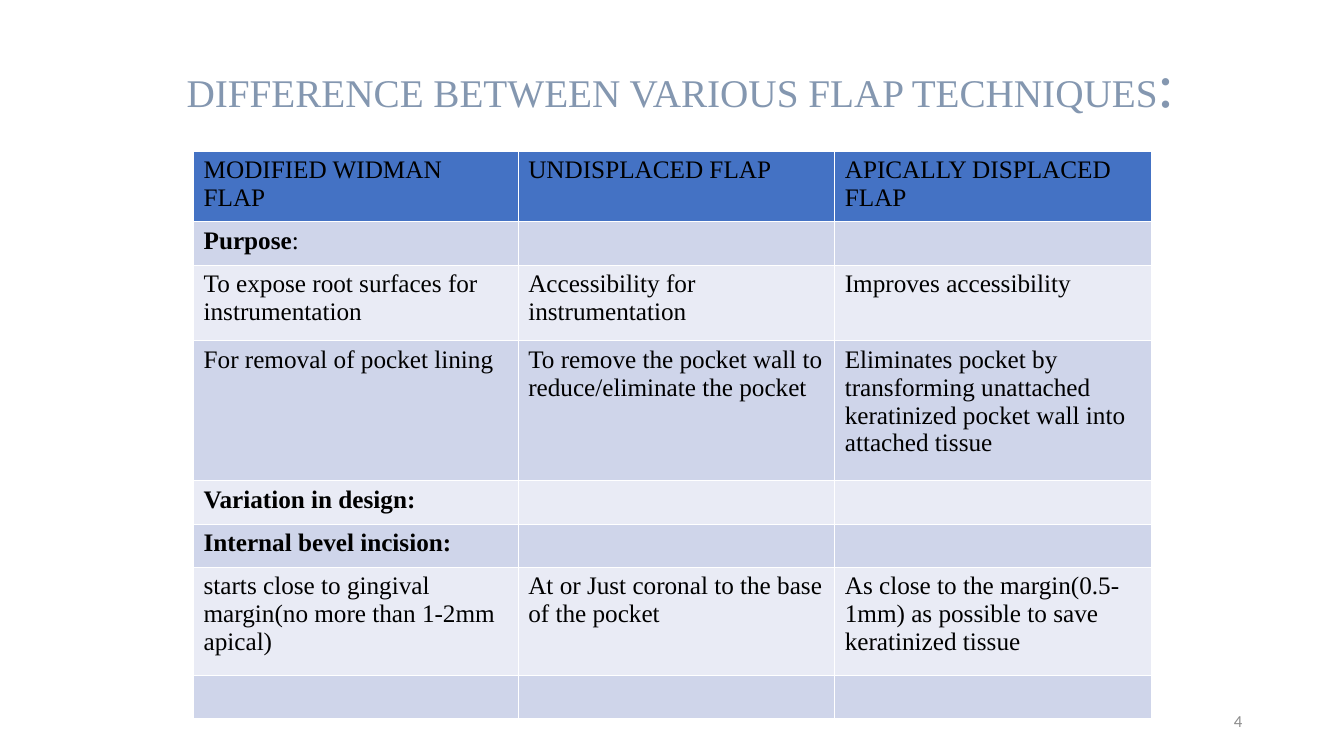
import pptx
import pptx.dml.color
import pptx.enum.text
import pptx.oxml
import pptx.oxml.ns
import pptx.util
from pptx.util import Inches

ALIGN = pptx.enum.text.PP_ALIGN
MIDDLE = pptx.enum.text.MSO_ANCHOR.MIDDLE

COLUMN_WIDTHS = [3.22, 3.14, 3.14]
ROW_HEIGHTS = [0.7, 0.43, 0.75, 1.39, 0.43, 0.43, 1.07, 0.43]
HEADER_FILL = "4472C4"
BAND_FILLS = ["E9EBF5", "CFD5EA"]

# A cell is a list of (text, format) runs, or plain text.
BOLD = {"bold": True}
COMPARISON = [
    ["MODIFIED WIDMAN FLAP", "UNDISPLACED FLAP", "APICALLY DISPLACED FLAP"],
    [[("Purpose", BOLD), (":", {})], "", ""],
    ["To expose root surfaces for instrumentation",
     "Accessibility for instrumentation",
     "Improves accessibility"],
    ["For removal of pocket lining",
     "To remove the pocket wall to reduce/eliminate the pocket",
     "Eliminates pocket by transforming unattached keratinized pocket wall "
     "into attached tissue"],
    [[("Variation in design:", BOLD)], "", ""],
    [[("Internal bevel incision:", BOLD)], "", ""],
    ["starts close to gingival margin(no more than 1-2mm apical)",
     "At or Just coronal to the base of the pocket",
     "As close to the margin(0.5-1mm) as possible to save keratinized tissue"],
    ["", "", ""],
]


def rgb(value):
    return pptx.dml.color.RGBColor.from_string(value)


def add_run(paragraph, text, size=18, font="Times New Roman", color="000000", bold=False):
    run = paragraph.add_run()
    run.text = text
    run.font.size = pptx.util.Pt(size)
    run.font.name = font
    run.font.color.rgb = rgb(color)
    run.font.bold = bold


def set_borders(cell, color="FFFFFF", width=1):
    """Draw the same line on all four sides; call before filling the cell."""
    properties = cell._tc.get_or_add_tcPr()
    for side in ("lnL", "lnR", "lnT", "lnB"):
        properties.append(pptx.oxml.parse_xml(
            f'<a:{side} {pptx.oxml.ns.nsdecls("a")} w="{pptx.util.Pt(width)}">'
            f'<a:solidFill><a:srgbClr val="{color}"/></a:solidFill></a:{side}>'))


class FlapSlide:
    """Holds the text style and the slide being filled."""

    title_color = "8497B0"
    number_color = "8C8C8C"

    def __init__(self, presentation):
        self.slide = presentation.slides.add_slide(presentation.slide_layouts[5])

    def title(self, left, top, width, height, runs):
        heading = self.slide.shapes.title
        heading.left, heading.top = Inches(left), Inches(top)
        heading.width, heading.height = Inches(width), Inches(height)
        frame = heading.text_frame
        frame.word_wrap = True
        frame.auto_size = pptx.enum.text.MSO_AUTO_SIZE.NONE
        frame.vertical_anchor = MIDDLE
        line = frame.paragraphs[0]
        line.alignment = ALIGN.LEFT
        line.line_spacing = 0.9
        for text, size in runs:
            add_run(line, text, size=size, color=self.title_color)

    def table(self, left, top, rows):
        table = self.slide.shapes.add_table(
            len(rows), len(COLUMN_WIDTHS), Inches(left), Inches(top),
            Inches(sum(COLUMN_WIDTHS)), Inches(sum(ROW_HEIGHTS))).table
        for column, width in zip(table.columns, COLUMN_WIDTHS):
            column.width = Inches(width)
        for index, (row, height, contents) in enumerate(zip(table.rows, ROW_HEIGHTS, rows)):
            row.height = Inches(height)
            fill = BAND_FILLS[index % 2] if index else HEADER_FILL
            for cell, content in zip(row.cells, contents):
                self.cell(cell, content, fill)

    def cell(self, cell, content, fill):
        set_borders(cell)
        cell.fill.solid()
        cell.fill.fore_color.rgb = rgb(fill)
        runs = [(content, {})] if isinstance(content, str) else content
        for text, style in runs:
            if text:
                add_run(cell.text_frame.paragraphs[0], text, **style)

    def page_number(self, left, top, width, height, number):
        box = self.slide.shapes.add_textbox(
            Inches(left), Inches(top), Inches(width), Inches(height))
        frame = box.text_frame
        frame.word_wrap = True
        frame.vertical_anchor = MIDDLE
        frame.paragraphs[0].alignment = ALIGN.RIGHT
        add_run(frame.paragraphs[0], number, size=12, font="Calibri", color=self.number_color)


def main():
    presentation = pptx.Presentation()
    presentation.slide_width = Inches(13.33)
    presentation.slide_height = Inches(7.5)
    slide = FlapSlide(presentation)
    slide.title(1.75, 0.33, 10.33, 1.08,
                [("DIFFERENCE BETWEEN VARIOUS FLAP TECHNIQUES", 28), (":", 44)])
    slide.table(1.92, 1.5, COMPARISON)
    slide.page_number(9.42, 6.95, 3, 0.4, "4")
    presentation.save("out.pptx")


if __name__ == "__main__":
    main()
